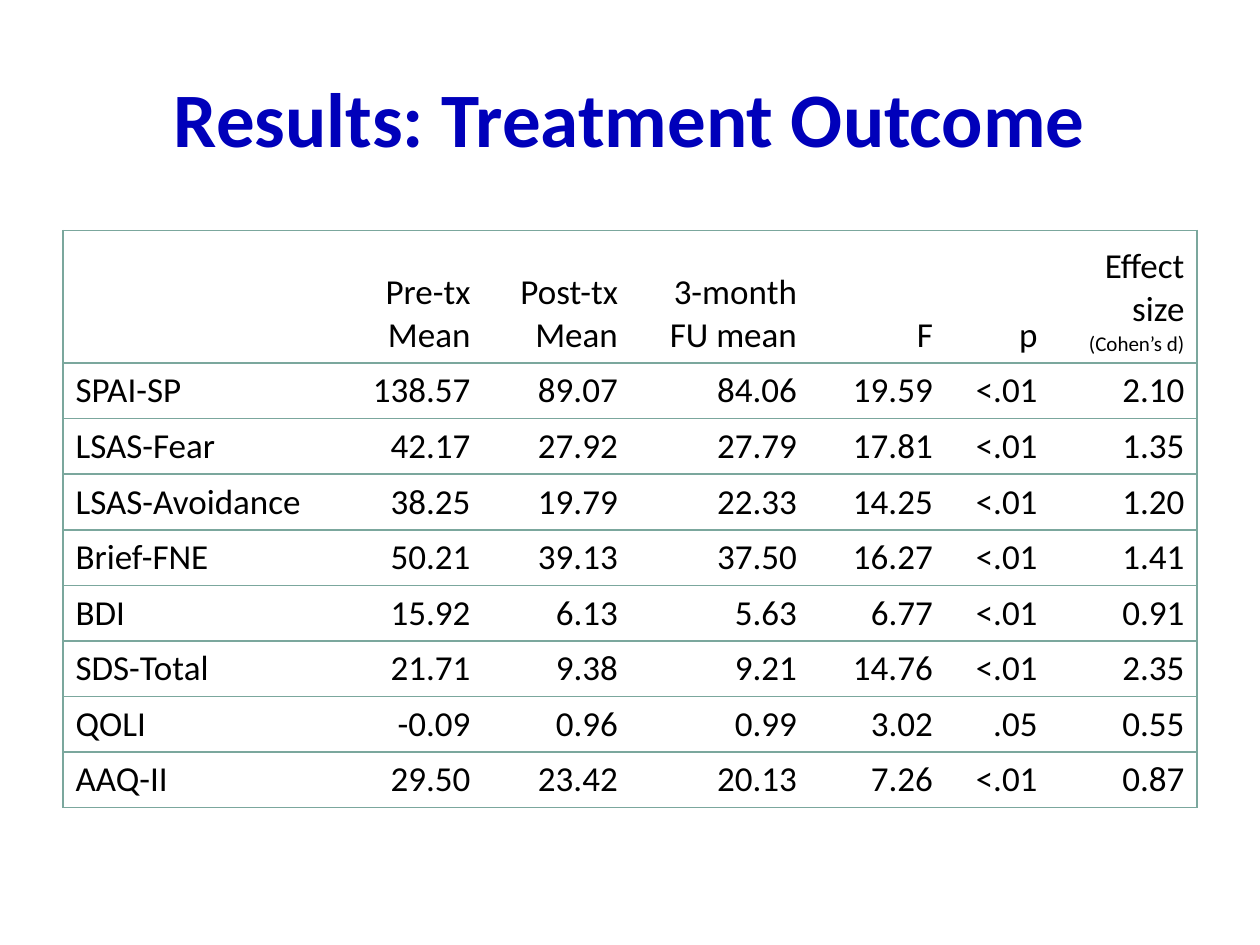
from lxml.etree import SubElement
from pptx import Presentation
from pptx.dml.color import RGBColor
from pptx.enum.text import MSO_ANCHOR, PP_ALIGN
from pptx.oxml.ns import qn
from pptx.util import Cm, Pt

BLUE = RGBColor(0x00, 0x00, 0xBA)
BLACK = RGBColor(0x00, 0x00, 0x00)
WHITE = RGBColor(0xFF, 0xFF, 0xFF)
GREEN = RGBColor(0x7B, 0xA7, 0x9D)

TITLE_FONT = {"name": "Calibri", "size": Pt(44), "bold": True}
BODY_FONT = {"name": "Calibri", "size": Pt(20), "bold": False}
NOTE_FONT = {**BODY_FONT, "size": Pt(12)}

PLAIN_TABLE_STYLE = "{2D5ABB26-0587-4C30-8999-92F81FD0307C}"
COLUMN_WIDTHS = [5.25, 3.22, 2.97, 3.61, 2.74, 2.11, 2.96]
HEADER_HEIGHT = 2.67
ROW_HEIGHT = 1.12

HEADER = ["", "Pre-tx Mean", "Post-tx Mean", "3-month FU mean", "F", "p", "Effect size "]
HEADER_NOTE = "(Cohen’s d)"
OUTCOMES = [
    ["SPAI-SP", "138.57", "89.07", "84.06", "19.59", "<.01", "2.10"],
    ["LSAS-Fear", "42.17", "27.92", "27.79", "17.81", "<.01", "1.35"],
    ["LSAS-Avoidance", "38.25", "19.79", "22.33", "14.25", "<.01", "1.20"],
    ["Brief-FNE", "50.21", "39.13", "37.50", "16.27", "<.01", "1.41"],
    ["BDI", "15.92", "6.13", "5.63", "6.77", "<.01", "0.91"],
    ["SDS-Total", "21.71", "9.38", "9.21", "14.76", "<.01", "2.35"],
    ["QOLI", "-0.09", "0.96", "0.99", "3.02", ".05", "0.55"],
    ["AAQ-II", "29.50", "23.42", "20.13", "7.26", "<.01", "0.87"],
]


def set_attributes(target, values):
    for name, value in values.items():
        setattr(target, name, value)


def add_run(paragraph, text, font_values, color):
    run = paragraph.add_run()
    run.text = text
    set_attributes(run.font, font_values)
    run.font.color.rgb = color


def add_title(slide, text):
    title = slide.shapes.title
    set_attributes(title, {"left": Cm(1.27), "top": Cm(0.76),
                           "width": Cm(22.86), "height": Cm(3.18)})
    title.text_frame.vertical_anchor = MSO_ANCHOR.MIDDLE
    paragraph = title.text_frame.paragraphs[0]
    paragraph.alignment = PP_ALIGN.CENTER
    add_run(paragraph, text, TITLE_FONT, BLUE)


def add_borders(cell, sides):
    properties = cell._tc.get_or_add_tcPr()
    for side in sides:
        line = SubElement(properties, qn(f"a:ln{side}"), w=str(Pt(1)))
        fill = SubElement(line, qn("a:solidFill"))
        SubElement(fill, qn("a:srgbClr"), val=str(GREEN))


def format_cell(cell, text, column, last_column):
    left = "L" if column == 0 else ""
    right = "R" if column == last_column else ""
    add_borders(cell, left + right + "TB")
    cell.fill.solid()
    cell.fill.fore_color.rgb = WHITE
    cell.vertical_anchor = MSO_ANCHOR.BOTTOM
    paragraph = cell.text_frame.paragraphs[0]
    paragraph.alignment = PP_ALIGN.RIGHT if column else PP_ALIGN.LEFT
    if text:
        add_run(paragraph, text, BODY_FONT, BLACK)


def add_outcome_table(slide):
    rows = [HEADER] + OUTCOMES
    heights = [HEADER_HEIGHT] + [ROW_HEIGHT] * len(OUTCOMES)
    frame = slide.shapes.add_table(len(rows), len(HEADER), Cm(1.27), Cm(4.65),
                                   Cm(sum(COLUMN_WIDTHS)), Cm(sum(heights)))
    table = frame.table
    set_attributes(table, {"first_row": False, "horz_banding": False})
    table._tbl.tblPr.find(qn("a:tableStyleId")).text = PLAIN_TABLE_STYLE
    for column, width in zip(table.columns, COLUMN_WIDTHS):
        column.width = Cm(width)
    for row, height in zip(table.rows, heights):
        row.height = Cm(height)
    last_column = len(HEADER) - 1
    for row_index, texts in enumerate(rows):
        for column_index, text in enumerate(texts):
            format_cell(table.cell(row_index, column_index), text, column_index, last_column)
    effect_header = table.cell(0, last_column).text_frame.paragraphs[0]
    add_run(effect_header, HEADER_NOTE, NOTE_FONT, BLACK)


def main():
    presentation = Presentation()
    set_attributes(presentation, {"slide_width": Cm(25.4), "slide_height": Cm(19.05)})
    slide = presentation.slides.add_slide(presentation.slide_layouts[5])
    add_title(slide, "Results: Treatment Outcome")
    add_outcome_table(slide)
    presentation.save("out.pptx")


if __name__ == "__main__":
    main()
